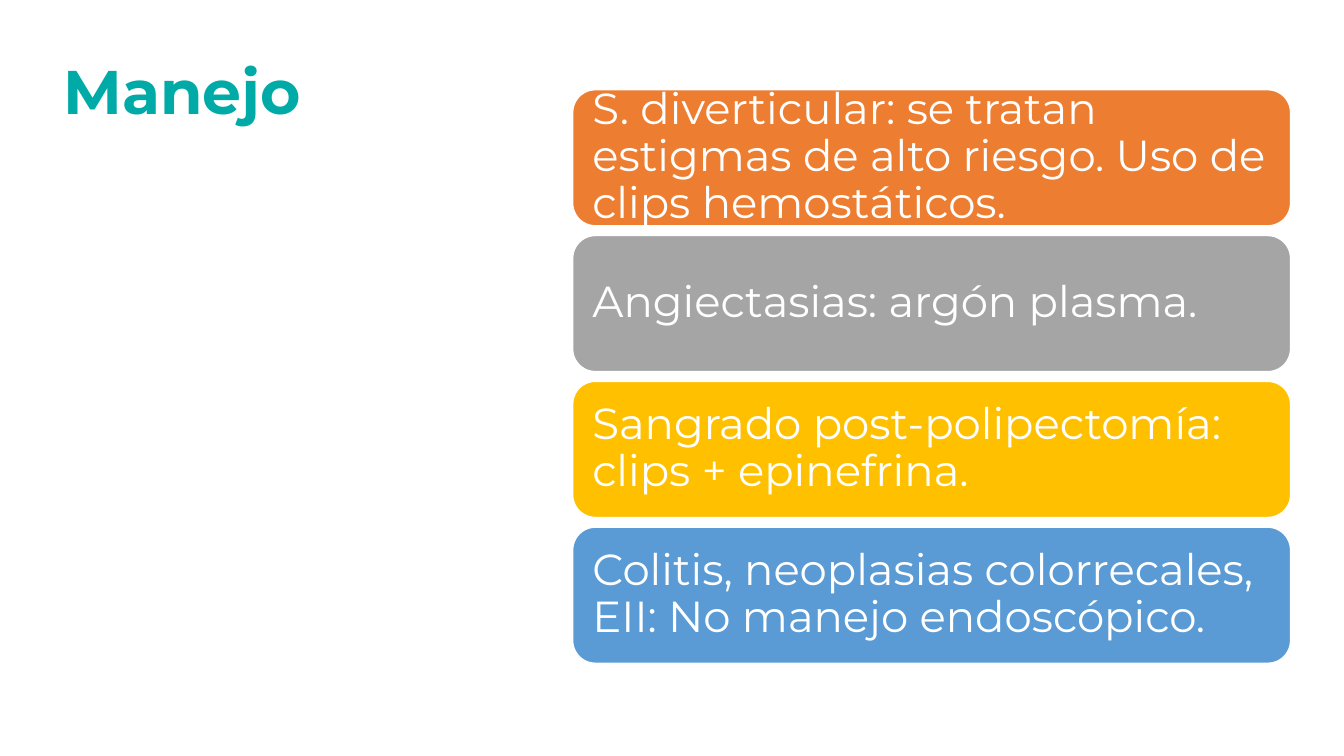
"""Build the slide 'Manejo' with its stack of management cards."""
from pptx import Presentation
from pptx.dml.color import RGBColor
from pptx.enum.shapes import MSO_SHAPE as Shape
from pptx.enum.text import MSO_ANCHOR as Anchor, PP_ALIGN as Align
from pptx.util import Inches, Pt

WHITE = RGBColor(0xFF, 0xFF, 0xFF)
TEAL = RGBColor(0x00, 0xAA, 0xA7)
ORANGE = RGBColor(0xED, 0x7D, 0x31)
GRAY = RGBColor(0xA5, 0xA5, 0xA5)
GOLD = RGBColor(0xFF, 0xC0, 0x00)
BLUE = RGBColor(0x5B, 0x9B, 0xD5)

FONT = "Montserrat"
HEADING = "Manejo"
CARDS = [
    ("S. diverticular: se tratan estigmas de alto riesgo. Uso de clips hemostáticos.", ORANGE),
    ("Angiectasias: argón plasma.", GRAY),
    ("Sangrado post-polipectomía: clips + epinefrina.", GOLD),
    ("Colitis, neoplasias colorrecales, EII: No manejo endoscópico.", BLUE),
]

SLIDE_WIDTH, SLIDE_HEIGHT = 13.33, 7.5
HEADING_BOX = (0.53, 0.21, 11.5, 1.45)
STACK_LEFT, STACK_TOP, STACK_WIDTH, STACK_HEIGHT = 5.68, 0.89, 7.12, 5.69
CARD_HEIGHT = 1.35
CARD_STEP = (STACK_HEIGHT - CARD_HEIGHT) / (len(CARDS) - 1)


def write(holder, text, size, color, bold=False, inset=(0.1, 0.05)):
    frame = holder.text_frame
    frame.word_wrap = True
    frame.vertical_anchor = Anchor.MIDDLE
    frame.margin_left = frame.margin_right = Inches(inset[0])
    frame.margin_top = frame.margin_bottom = Inches(inset[1])
    line = frame.paragraphs[0]
    line.alignment = Align.LEFT
    line.line_spacing = 0.9
    run = line.add_run()
    run.text = text
    run.font.name = FONT
    run.font.size = Pt(size)
    run.font.bold = bold
    run.font.color.rgb = color


def main():
    deck = Presentation()
    deck.slide_width, deck.slide_height = Inches(SLIDE_WIDTH), Inches(SLIDE_HEIGHT)
    slide = deck.slides.add_slide(deck.slide_layouts[6])

    heading = slide.shapes.add_textbox(*map(Inches, HEADING_BOX))
    write(heading, HEADING, size=44, color=TEAL, bold=True)

    for row, (advice, fill) in enumerate(CARDS):
        area = (STACK_LEFT, STACK_TOP + row * CARD_STEP, STACK_WIDTH, CARD_HEIGHT)
        card = slide.shapes.add_shape(Shape.ROUNDED_RECTANGLE, *map(Inches, area))
        card.shadow.inherit = False
        card.fill.solid()
        card.fill.fore_color.rgb = fill
        card.line.color.rgb = WHITE
        card.line.width = Pt(1)
        write(card, advice, size=31, color=WHITE, inset=(0.13, 0.13))

    deck.save("out.pptx")


if __name__ == "__main__":
    main()
